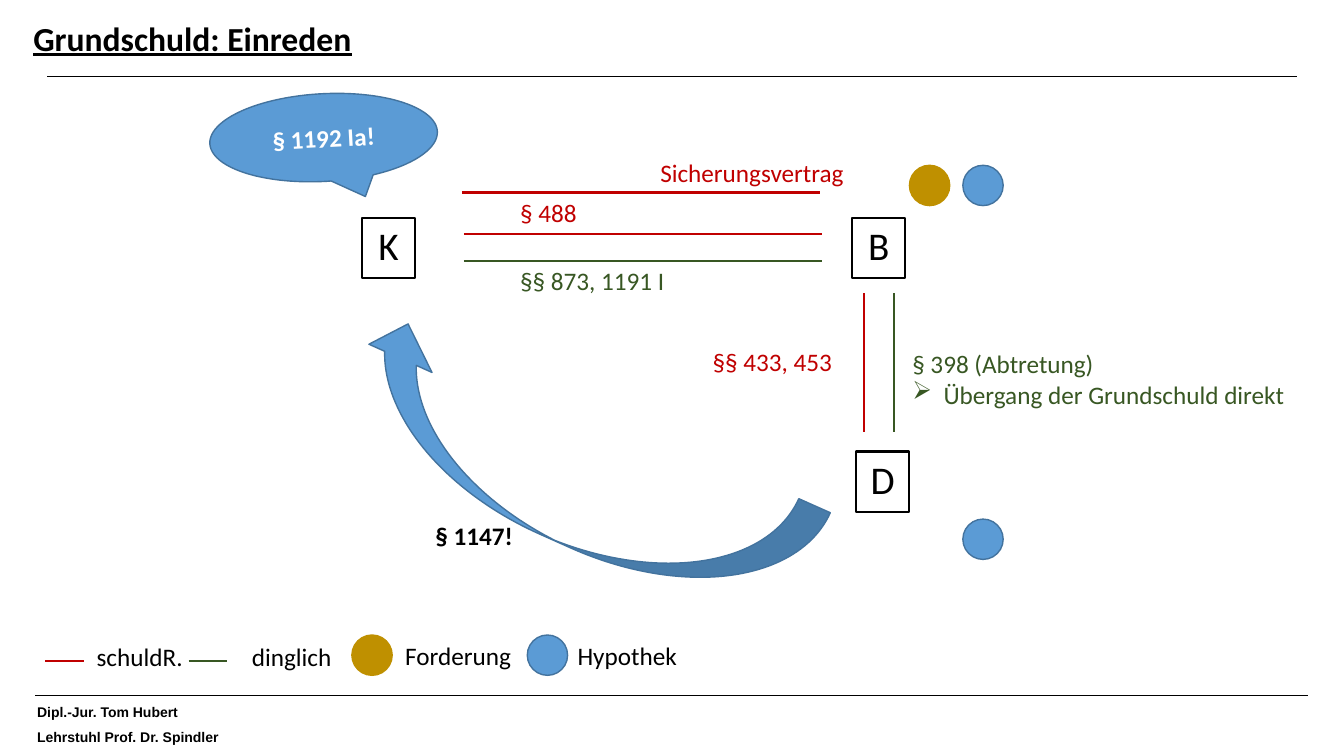
from lxml.etree import SubElement
from pptx import Presentation
from pptx.dml.color import RGBColor
from pptx.enum.shapes import MSO_CONNECTOR, MSO_SHAPE
from pptx.enum.text import MSO_ANCHOR, MSO_AUTO_SIZE, PP_ALIGN
from pptx.oxml.ns import qn
from pptx.util import Pt

PX = 9144  # EMU per px, 100 px to the inch
COLORS = {
    "black": "000000", "white": "FFFFFF", "red": "C00000", "green": "385723",
    "gold": "BF9000", "blue": "5B9BD5", "blue_edge": "43739E",
}
DOT = 40
DOT_STYLES = {"Forderung": ("gold", "gold"), "Hypothek": ("blue", "blue_edge")}


def px(*lengths):
    return [round(n * PX) for n in lengths]


def rgb(name):
    return RGBColor.from_string(COLORS[name])


def add_run(p, text, size=18, color="black", bold=False, font="Calibri"):
    r = p.add_run()
    r.text = text
    r.font.name, r.font.size, r.font.bold = font, Pt(size), bold
    r.font.color.rgb = rgb(color)
    return r


def add_line(s, x1, y1, x2, y2, color, width=1.5):
    line = s.shapes.add_connector(MSO_CONNECTOR.STRAIGHT, *px(x1, y1, x2, y2))
    line.line.color.rgb, line.line.width = rgb(color), Pt(width)
    SubElement(line._element.spPr, qn("a:effectLst"))


def add_label(s, x, y, w, text, color="black", h=40, wrap=True, **font):
    tf = s.shapes.add_textbox(*px(x, y, w, h)).text_frame
    tf.word_wrap, tf.auto_size = wrap, MSO_AUTO_SIZE.SHAPE_TO_FIT_TEXT
    add_run(tf.paragraphs[0], text, color=color, **font)
    return tf


def add_figure(s, kind, x, y, w, h, fill, edge, width=1):
    sp = s.shapes.add_shape(kind, *px(x, y, w, h))
    sp.shadow.inherit = False
    if fill:
        sp.fill.solid()
        sp.fill.fore_color.rgb = rgb(fill)
    else:
        sp.fill.background()
    sp.line.color.rgb, sp.line.width = rgb(edge), Pt(width)
    tf = sp.text_frame
    tf.vertical_anchor = MSO_ANCHOR.MIDDLE
    tf.paragraphs[0].alignment = PP_ALIGN.CENTER
    return sp


def add_dot(s, x, y, right):
    add_figure(s, MSO_SHAPE.OVAL, x, y, DOT, DOT, *DOT_STYLES[right])


def add_party(s, x, y, name):
    sp = add_figure(s, MSO_SHAPE.RECTANGLE, x, y, 53, 60, None, "black", 1.5)
    p = sp.text_frame.paragraphs[0]
    p.line_spacing, p.space_before = 0.9, Pt(10)
    add_run(p, name, 28)


def add_header(s, x, y, w, h):
    title = s.shapes.title
    title.left, title.top, title.width, title.height = px(x, y, w, h)
    title.text_frame.vertical_anchor = MSO_ANCHOR.MIDDLE
    p = title.text_frame.paragraphs[0]
    p.alignment, p.line_spacing = PP_ALIGN.LEFT, 0.9
    add_run(p, "Grundschuld: Einreden", 24, bold=True).font.underline = True
    add_line(s, x + 24, y + 63, x + w, y + 63, "black", 1)


def add_loan(s, x, y):
    """K and B with the three relations between them."""
    add_party(s, x, y, "K")
    add_party(s, x + 486, y, "B")
    for dx, dy, color in ((99, -25, "red"), (101, 16, "red"), (101, 43, "green")):
        add_line(s, x + dx, y + dy, x + dx + 355, y + dy, color)
    add_label(s, x + 286, y - 65, 235, "Sicherungsvertrag", "red")
    add_label(s, x + 147, y - 25, 283, "§ 488", "red")
    add_label(s, x + 147, y + 42, 228, "§§ 873, 1191 I", "green")
    for dx, right in ((543, "Forderung"), (596, "Hypothek")):
        add_dot(s, x + dx, y - 52, right)


def add_assignment(s, x, y):
    """D below B with the sale and the assignment."""
    for dx, color in ((0, "red"), (30, "green")):
        add_line(s, x + dx, y, x + dx, y + 138, color)
    add_label(s, x - 160, y + 48, 283, "§§ 433, 453", "red")
    tf = add_label(s, x + 38, y + 50, 410, "§ 398 (Abtretung)", "green", h=71)
    p = tf.add_paragraph()
    add_run(p, "Übergang der Grundschuld direkt", color="green")
    pPr = p._p.get_or_add_pPr()
    indent = px(31)[0]
    pPr.set("marL", str(indent))
    pPr.set("indent", str(-indent))
    SubElement(pPr, qn("a:buFont")).set("typeface", "Wingdings")
    SubElement(pPr, qn("a:buChar")).set("char", "Ø")
    add_party(s, x - 8, y + 157, "D")
    add_dot(s, x + 98, y + 224, "Hypothek")


def add_claim(s, x, y):
    """Claim of D against K, and the defence of K."""
    arrow = add_figure(s, MSO_SHAPE.CURVED_DOWN_ARROW, x + 116, y + 309, 493, 137,
                       "blue", "blue_edge")
    arrow.rotation = 204.1
    add_label(s, x + 214, y + 418, 114, "§ 1147!", bold=True)
    callout = add_figure(s, MSO_SHAPE.OVAL_CALLOUT, x, y, 226, 87, "blue", "blue_edge")
    callout.rotation = 356.9
    callout.adjustments[0], callout.adjustments[1] = 0.169, 0.697
    add_run(callout.text_frame.paragraphs[0], "§ 1192 Ia!", color="white", bold=True)


def add_legend(s, x, y):
    for dx, label_dx, name, color in ((0, 41, "schuldR.", "red"),
                                      (142, 195, "dinglich", "green")):
        add_line(s, x + dx, y + 26, x + dx + 38, y + 26, color)
        add_label(s, x + label_dx, y + 1, 228, name)
    for dx, label_dx, name in ((304, 347, "Forderung"), (478, 518, "Hypothek")):
        add_dot(s, x + dx, y, name)
        add_label(s, x + label_dx, y, 228, name)


def add_footer(s, x, y, w):
    add_line(s, x + 8, y, x + w, y, "black", 1)
    for dy, width, text in ((3, 163, "Dipl.-Jur. Tom Hubert"),
                            (28, 207, "Lehrstuhl Prof. Dr. Spindler")):
        add_label(s, x, y + dy, width, text, h=27, wrap=False,
                  size=10, bold=True, font="Arial")


def main():
    prs = Presentation()
    prs.slide_width, prs.slide_height = px(1333, 750)
    s = prs.slides.add_slide(prs.slide_layouts[5])
    add_header(s, 23, 13, 1263, 54)
    add_loan(s, 359, 216)
    add_assignment(s, 857, 291)
    add_claim(s, 208, 93)
    add_legend(s, 45, 630)
    add_footer(s, 27, 690, 1270)
    prs.save("out.pptx")


if __name__ == "__main__":
    main()
